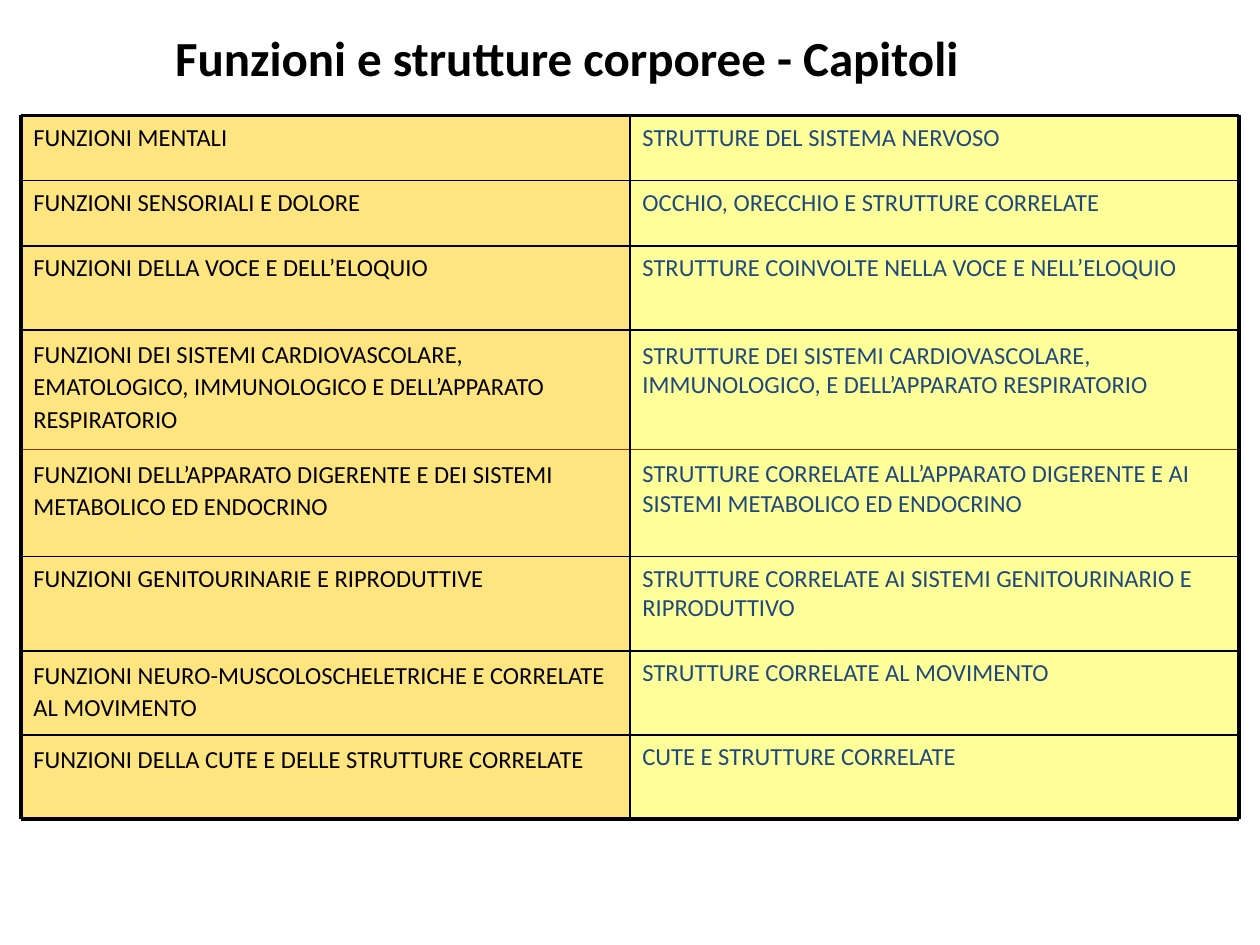
from itertools import pairwise

from lxml.etree import SubElement
from pptx import Presentation
from pptx.dml.color import RGBColor
from pptx.enum.shapes import MSO_CONNECTOR, MSO_SHAPE
from pptx.enum.text import MSO_ANCHOR, PP_ALIGN
from pptx.oxml.ns import qn
from pptx.util import Inches, Pt

COLS, ROWS = 60, 45
LEFT, MIDDLE, RIGHT = 1, 30, 59
EDGES = [5.5, 8.6, 11.7, 15.7, 21.4, 26.5, 31, 35, 39]

# Function, its line spacing, matching structure, its top inset in inches
CHAPTERS = [
    ("FUNZIONI MENTALI", 1, "STRUTTURE DEL SISTEMA NERVOSO", 0.05),
    ("FUNZIONI SENSORIALI E DOLORE", 1,
     "OCCHIO, ORECCHIO E STRUTTURE CORRELATE", 0.05),
    ("FUNZIONI DELLA VOCE E DELL’ELOQUIO", 1,
     "STRUTTURE COINVOLTE NELLA VOCE E NELL’ELOQUIO", 0.05),
    ("FUNZIONI DEI SISTEMI CARDIOVASCOLARE, EMATOLOGICO, IMMUNOLOGICO "
     "E DELL’APPARATO RESPIRATORIO", 1.1,
     "STRUTTURE DEI SISTEMI CARDIOVASCOLARE, IMMUNOLOGICO, "
     "E DELL’APPARATO RESPIRATORIO", 0.08),
    ("FUNZIONI DELL’APPARATO DIGERENTE E DEI SISTEMI METABOLICO "
     "ED ENDOCRINO", 1.1,
     "STRUTTURE CORRELATE ALL’APPARATO DIGERENTE E AI SISTEMI "
     "METABOLICO ED ENDOCRINO", 0.07),
    ("FUNZIONI GENITOURINARIE E RIPRODUTTIVE", 1,
     "STRUTTURE CORRELATE AI SISTEMI GENITOURINARIO E RIPRODUTTIVO", 0.05),
    ("FUNZIONI NEURO-MUSCOLOSCHELETRICHE E CORRELATE AL MOVIMENTO", 1.1,
     "STRUTTURE CORRELATE AL MOVIMENTO", 0.05),
    ("FUNZIONI DELLA CUTE E DELLE STRUTTURE CORRELATE", 1.1,
     "CUTE E STRUTTURE CORRELATE", 0.05),
]


def rgb(value):
    return RGBColor.from_string(value)


class Deck:
    font, body_size, title_size = "Calibri", 14, 28
    black, blue, brown = "000000", "1F497D", "993300"
    gold, yellow = "FFCC00", "FFFF99"
    thin, thick = 1, 2.25

    def __init__(self):
        self.prs = Presentation()
        self.prs.slide_width, self.prs.slide_height = Inches(10), Inches(7.5)
        self.s = self.prs.slides.add_slide(self.prs.slide_layouts[6])

    def x(self, col):
        return round(self.prs.slide_width * col / COLS)

    def y(self, row):
        return round(self.prs.slide_height * row / ROWS)

    def box(self, left, top, right, bottom):
        return (self.x(left), self.y(top),
                self.x(right - left), self.y(bottom - top))

    def set_text(self, sp, text, size, color, bold=False,
                 align=PP_ALIGN.LEFT):
        tf = sp.text_frame
        tf.text = text
        tf.word_wrap = True
        tf.vertical_anchor = MSO_ANCHOR.TOP
        p = tf.paragraphs[0]
        p.alignment = align
        font = p.runs[0].font
        font.name, font.size, font.bold = self.font, Pt(size), bold
        font.color.rgb = rgb(color)
        return tf

    def title(self, text, *edges):
        sp = self.s.shapes.add_textbox(*self.box(*edges))
        self.set_text(sp, text, self.title_size, self.black, True,
                      PP_ALIGN.CENTER)

    def cell(self, text, edges, fill, color, opacity=100, spacing=1,
             inset=0.05):
        sp = self.s.shapes.add_shape(MSO_SHAPE.RECTANGLE, *self.box(*edges))
        sp.shadow.inherit = False
        sp.line.fill.background()
        sp.fill.solid()
        sp.fill.fore_color.rgb = rgb(fill)
        if opacity < 100:
            clr = sp._element.spPr.find(f".//{qn('a:srgbClr')}")
            SubElement(clr, qn("a:alpha"), val=str(opacity * 1000))
        tf = self.set_text(sp, text, self.body_size, color)
        tf.margin_top = Inches(inset)
        tf.paragraphs[0].line_spacing = spacing

    def rule(self, x1, y1, x2, y2, width, color=black):
        ln = self.s.shapes.add_connector(
            MSO_CONNECTOR.STRAIGHT,
            self.x(x1), self.y(y1), self.x(x2), self.y(y2))
        ln.line.width = Pt(width)
        ln.line.color.rgb = rgb(color)
        SubElement(ln._element.spPr, qn("a:effectLst"))


def main():
    deck = Deck()
    deck.title("Funzioni e strutture corporee - Capitoli ", 1.5, 1, 53, 6.5)

    for (top, bottom), chapter in zip(pairwise(EDGES), CHAPTERS):
        function, spacing, structure, inset = chapter
        deck.cell(function, (LEFT, top, MIDDLE, bottom), deck.gold,
                  deck.black, opacity=50, spacing=spacing)
        deck.cell(structure, (MIDDLE, top, RIGHT, bottom), deck.yellow,
                  deck.blue, inset=inset)

    first, last = EDGES[0], EDGES[-1]
    for i, row in enumerate(EDGES):
        deck.rule(LEFT, row, RIGHT, row,
                  deck.thick if row in (first, last) else deck.thin,
                  deck.brown if i == 4 else deck.black)
    for col in (LEFT, MIDDLE, RIGHT):
        deck.rule(col, first, col, last,
                  deck.thin if col == MIDDLE else deck.thick)

    deck.prs.save("out.pptx")


if __name__ == "__main__":
    main()
